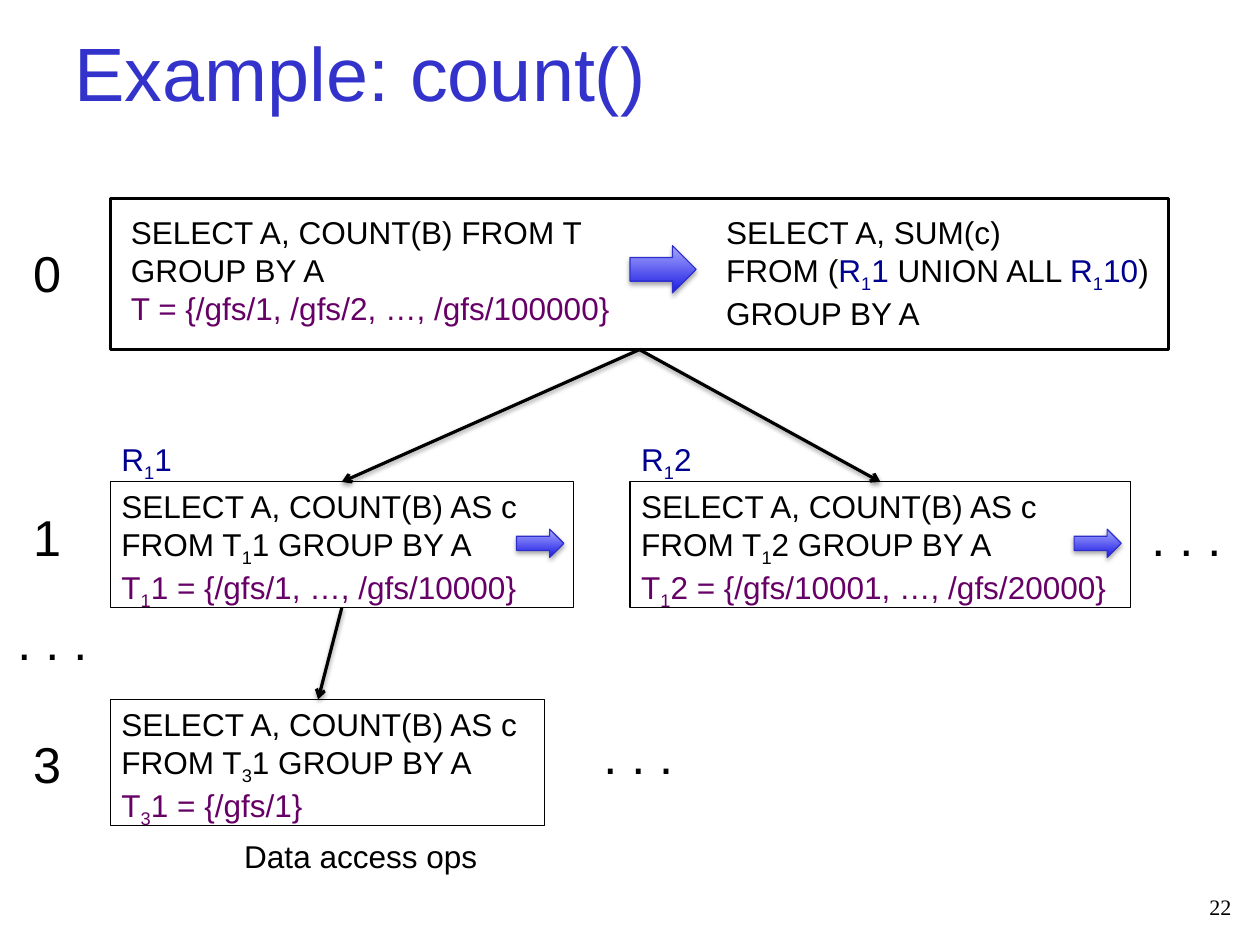
from lxml import etree
from pptx import Presentation
from pptx.dml.color import RGBColor
from pptx.enum.shapes import MSO_CONNECTOR, MSO_SHAPE
from pptx.enum.text import MSO_ANCHOR, PP_ALIGN
from pptx.oxml.ns import qn
from pptx.util import Pt

RECT, RIGHT_ARROW = MSO_SHAPE.RECTANGLE, MSO_SHAPE.RIGHT_ARROW
STRAIGHT = MSO_CONNECTOR.STRAIGHT
TOP, MIDDLE = MSO_ANCHOR.TOP, MSO_ANCHOR.MIDDLE
LEFT, RIGHT = PP_ALIGN.LEFT, PP_ALIGN.RIGHT
TOP_SIDE, BOTTOM_SIDE = 0, 2
BLACK, NAVY, PURPLE, TITLE_BLUE = "000000", "000090", "660066", "3333CC"


def set_color(target, color):
    target.rgb = RGBColor.from_string(color)


def add_shadow(sp, alpha, dist):
    effects = etree.SubElement(sp._element.spPr, qn("a:effectLst"))
    shadow = etree.SubElement(effects, qn("a:outerShdw"), blurRad=str(Pt(3.1)),
                              dist=str(Pt(dist)), dir="5400000", rotWithShape="0")
    color = etree.SubElement(shadow, qn("a:srgbClr"), val=BLACK)
    etree.SubElement(color, qn("a:alpha"), val=str(alpha * 1000))


def add_run(p, text, color, subscript=False):
    if not text:
        return
    r = p.add_run()
    r.text = text
    if color:
        set_color(r.font.color, color)
    if subscript:
        r.font._element.set("baseline", "-25000")


def add_pieces(p, pieces):
    """Each underscore lowers the one character after it."""
    mixed = len(pieces) > 1
    for text, color in pieces:
        run_color = color if mixed else None
        for i, line in enumerate(text.split("\n")):
            if i:
                p.add_line_break()
            plain, *lowered = line.split("_")
            add_run(p, plain, run_color)
            for part in lowered:
                add_run(p, part[0], run_color, subscript=True)
                add_run(p, part[1:], run_color)


def write(sp, paragraphs, size=20, font="Arial", align=LEFT, wrap=True, anchor=TOP):
    tf = sp.text_frame
    tf.word_wrap = wrap
    tf.vertical_anchor = anchor
    for i, pieces in enumerate(paragraphs):
        p = tf.add_paragraph() if i else tf.paragraphs[0]
        add_pieces(p, pieces)
        p.alignment = align
        p.font.size = Pt(size)
        p.font.name = font
        if len(pieces) == 1:
            set_color(p.font.color, pieces[0][1])


def add_text(s, x, y, w, h, paragraphs, **style):
    sp = s.shapes.add_textbox(Pt(x), Pt(y), Pt(w), Pt(h))
    write(sp, paragraphs, **style)


def add_label(s, x, y, w, h, text, color=BLACK, size=20):
    add_text(s, x, y, w, h, [[(text, color)]], size=size, wrap=False)


def add_box(s, x, y, w, h, weight):
    sp = s.shapes.add_shape(RECT, Pt(x), Pt(y), Pt(w), Pt(h))
    sp.shadow.inherit = False
    sp.fill.background()
    set_color(sp.line.color, BLACK)
    sp.line.width = Pt(weight)
    return sp


def add_query(s, x, y, w, table, files):
    sp = add_box(s, x, y, w, 80, 0.75)
    write(sp, [[(f"SELECT A, COUNT(B) AS c\nFROM {table} GROUP BY A", BLACK)],
               [(f"{table} = {{{files}}}", PURPLE)]])
    return sp


def add_block_arrow(s, x, y, w, h):
    sp = s.shapes.add_shape(RIGHT_ARROW, Pt(x), Pt(y), Pt(w), Pt(h))
    sp.fill.gradient()
    sp.fill.gradient_angle = 90
    for stop, color in zip(sp.fill.gradient_stops, ("1C1CE3", "A7A7FF")):
        set_color(stop.color, color)
    set_color(sp.line.color, "2E2ECB")
    sp.line.width = Pt(0.75)
    add_shadow(sp, 35, 1.8)


def add_link(s, parent, x, y, child=None):
    c = s.shapes.add_connector(STRAIGHT, 0, 0, Pt(x), Pt(y))
    c.begin_connect(parent, BOTTOM_SIDE)
    if child is not None:
        c.end_connect(child, TOP_SIDE)
    set_color(c.line.color, BLACK)
    c.line.width = Pt(2)
    ln = c._element.spPr.find(qn("a:ln"))
    etree.SubElement(ln, qn("a:tailEnd"), type="arrow")
    add_shadow(c, 38, 1.6)


def add_title(s, text):
    sp = s.shapes.title
    sp.left, sp.top, sp.width, sp.height = Pt(40), Pt(12), Pt(720), Pt(66)
    write(sp, [[(text, TITLE_BLUE)]], size=48, anchor=MIDDLE)


def main():
    prs = Presentation()
    prs.slide_width, prs.slide_height = Pt(800), Pt(600)
    s = prs.slides.add_slide(prs.slide_layouts[5])
    add_title(s, "Example: count()")

    root = add_box(s, 70, 126, 672, 96, 2)
    add_text(s, 76, 132, 354, 80, [
        [("SELECT A, COUNT(B) FROM T GROUP BY A", BLACK)],
        [("T = {/gfs/1, /gfs/2, …, /gfs/100000}", PURPLE)]])
    add_text(s, 454, 132, 294, 80, [
        [("SELECT A, SUM(c)\nFROM (", BLACK), ("R_11", NAVY), (" UNION ALL ", BLACK),
         ("R_110", NAVY), (")\nGROUP BY A", BLACK)]])

    first = add_query(s, 70, 306, 294, "T_11", "/gfs/1, …, /gfs/10000")
    second = add_query(s, 400, 306, 318, "T_12", "/gfs/10001, …, /gfs/20000")
    add_query(s, 70, 444, 276, "T_31", "/gfs/1")

    for level, y in (("0", 150), ("1", 318), ("3", 462)):
        add_label(s, 14, y, 32, 46, level, size=32)
    for x, y in ((724, 318), (4, 384), (376, 456)):
        add_label(s, x, y, 60, 46, ". . .", size=32)
    for x, result in ((70, "R_11"), (400, "R_12")):
        add_label(s, x, 276, 48, 32, result, NAVY)
    add_label(s, 148, 528, 164, 32, "Data access ops")

    add_link(s, root, 217, 306, first)
    add_link(s, root, 559, 306, second)
    add_link(s, first, 202, 444)

    add_block_arrow(s, 400, 156, 42, 30)
    for x in (328, 682):
        add_block_arrow(s, x, 336, 30, 18)

    add_text(s, 730, 564, 59, 23, [[("22", BLACK)]], size=14,
             font="Times New Roman", align=RIGHT)
    prs.save("out.pptx")


if __name__ == "__main__":
    main()
